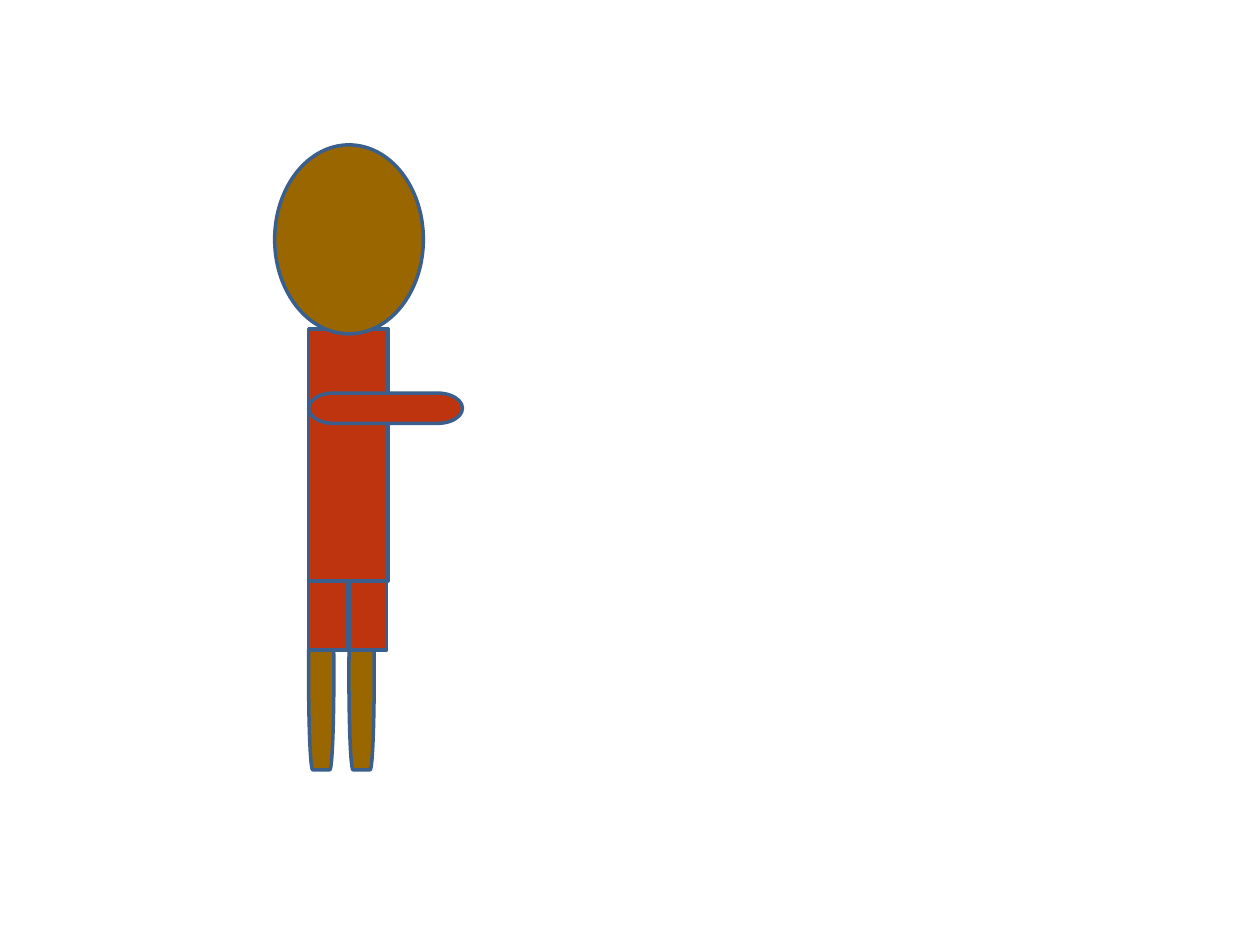
from pptx import Presentation
from pptx import util as u
from pptx.dml.color import RGBColor
from pptx.enum import shapes

SKIN = RGBColor(0x99, 0x66, 0x00)
CLOTH = RGBColor(0xBE, 0x34, 0x0E)
OUTLINE = RGBColor(0x3A, 0x5F, 0x8C)
KIND = shapes.MSO_SHAPE

deck = Presentation()
deck.slide_width, deck.slide_height = u.Inches(10), u.Inches(7.5)
page = deck.slides.add_slide(deck.slide_layouts[6])
figure = page.shapes.add_group_shape()


def add_part(kind, left, top, width, height, color):
    """Add one outlined body part to the figure, measured in inches."""
    part = figure.shapes.add_shape(kind, *map(u.Inches, (left, top, width, height)))
    part.shadow.inherit = False
    part.fill.solid()
    part.fill.fore_color.rgb = color
    part.line.color.rgb = OUTLINE
    part.line.width = u.Pt(2)


# Body grid: the left edge and the hip line anchor the parts
side, shoulder, body_width, body_height = 2.45, 2.61, 0.63, 2
hip = shoulder + body_height
leg_lefts = (side, side + 0.32)

# Torso, head and outstretched arm
add_part(KIND.RECTANGLE, side, shoulder, body_width, body_height, CLOTH)
add_part(KIND.OVAL, 2.18, 1.15, 1.18, 1.5, SKIN)
add_part(KIND.FLOWCHART_TERMINATOR, side, 3.12, 1.22, 0.24, CLOTH)

# Legs, then the shorts over them
for left in leg_lefts:
    add_part(KIND.FLOWCHART_TERMINATOR, left, hip, 0.2, 1.5, SKIN)
for left, width in zip(leg_lefts, (0.31, 0.3)):
    add_part(KIND.RECTANGLE, left, hip, width, 0.55, CLOTH)

deck.save("out.pptx")
